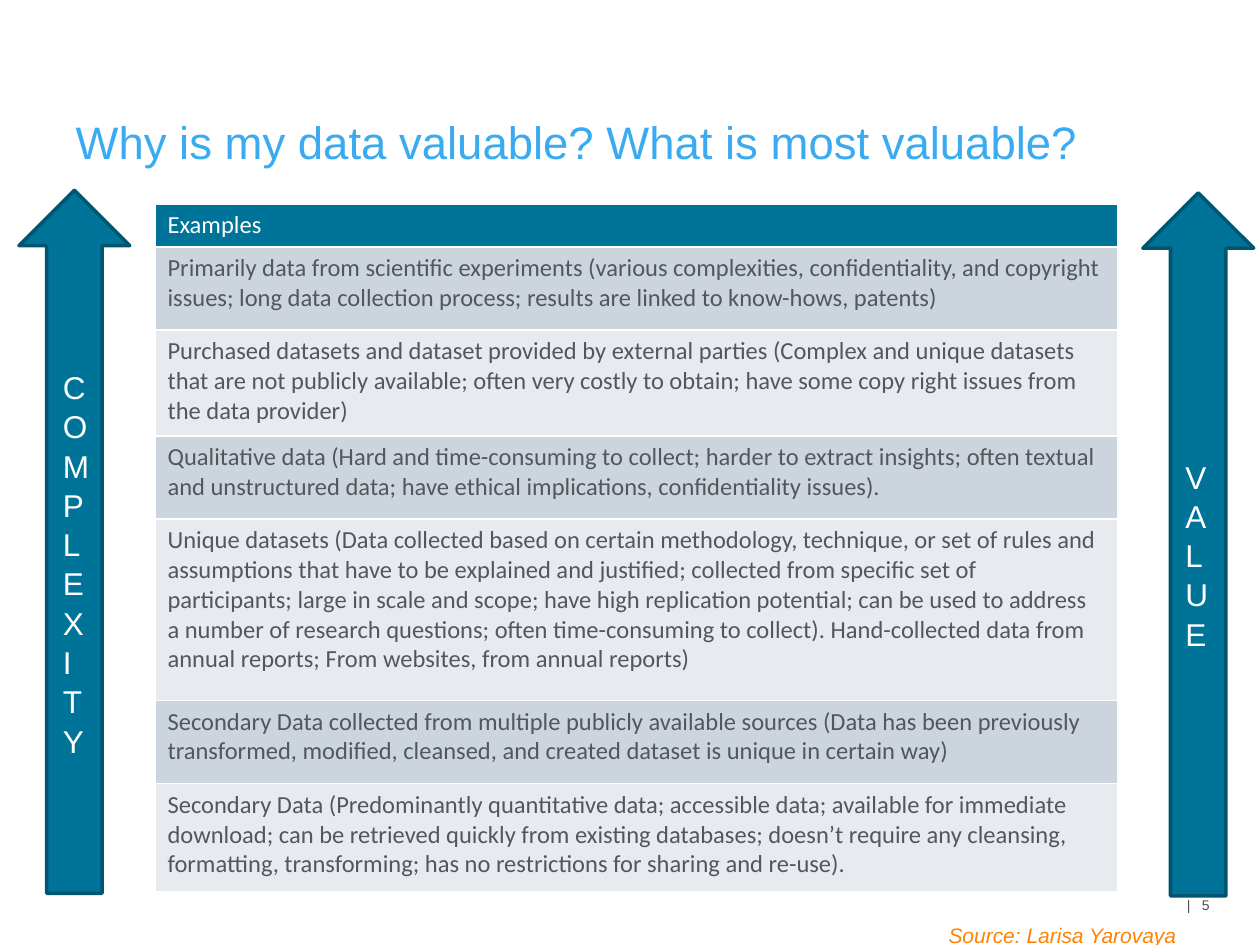
from dataclasses import dataclass

from lxml import etree
from pptx import Presentation
from pptx import util as u
from pptx.dml.color import RGBColor
from pptx.enum import shapes, text
from pptx.oxml.ns import qn


@dataclass(frozen=True)
class Theme:
    heading_font: str = "Arial"
    table_font: str = "Calibri"
    title: str = "3AABF0"
    teal: str = "007398"
    teal_dark: str = "005570"
    white: str = "FFFFFF"
    body: str = "53565A"
    footer: str = "505050"
    credit: str = "FF8200"
    bands: tuple = ("CCD5DD", "E7EBEF")
    title_size: float = 26
    label_size: float = 18
    table_size: float = 14
    credit_size: float = 12
    footer_size: float = 8


THEME = Theme()

ROWS = [
    ("Examples", 0.34),
    ("Primarily data from scientific experiments (various complexities, "
     "confidentiality, and copyright issues; long data collection process; "
     "results are linked to know-hows, patents)", 0.66),
    ("Purchased datasets and dataset provided by external parties (Complex and "
     "unique datasets that are not publicly available; often very costly to "
     "obtain; have some copy right issues from the data provider)", 0.84),
    ("Qualitative data (Hard and time-consuming to collect; harder to extract "
     "insights; often textual and unstructured data; have ethical implications, "
     "confidentiality issues).", 0.66),
    ("Unique datasets (Data collected based on certain methodology, technique, "
     "or set of rules and assumptions that have to be explained and justified; "
     "collected from specific set of participants; large in scale and scope; "
     "have high replication potential; can be used to address a number of "
     "research questions; often time-consuming to collect). Hand-collected data "
     "from annual reports; From websites, from annual reports)", 1.44),
    ("Secondary Data collected from multiple publicly available sources (Data "
     "has been previously transformed, modified, cleansed, and created dataset "
     "is unique in certain way)", 0.66),
    ("Secondary Data (Predominantly quantitative data; accessible data; "
     "available for immediate download; can be retrieved quickly from existing "
     "databases; doesn’t require any cleansing, formatting, transforming; has "
     "no restrictions for sharing and re-use).", 0.86),
]


def inches(box):
    return [u.Inches(length) for length in box]


def set_format(target, values):
    for name, value in values.items():
        setattr(target, name, value)


def style_font(paragraph, face, size, color, **extra):
    set_format(paragraph.font, {"name": face, "size": u.Pt(size), **extra})
    paragraph.font.color.rgb = RGBColor.from_string(color)


def paint(fill, color):
    fill.solid()
    fill.fore_color.rgb = RGBColor.from_string(color)


def add_title(slide, box, wording):
    title = slide.shapes.title
    set_format(title, dict(zip(("left", "top", "width", "height"), inches(box))))
    frame = title.text_frame
    frame.text = wording
    set_format(frame, {"word_wrap": True, "auto_size": text.MSO_AUTO_SIZE.NONE,
                       "vertical_anchor": text.MSO_ANCHOR.MIDDLE})
    frame.paragraphs[0].alignment = text.PP_ALIGN.LEFT
    style_font(frame.paragraphs[0], THEME.heading_font, THEME.title_size, THEME.title)


def add_examples_table(slide, box):
    table = slide.shapes.add_table(len(ROWS), 1, *inches(box)).table
    for index, (wording, height) in enumerate(ROWS):
        table.rows[index].height = u.Inches(height)
        cell = table.cell(index, 0)
        cell.text = wording
        header = index == 0
        paint(cell.fill, THEME.teal if header else THEME.bands[(index - 1) % 2])
        style_font(cell.text_frame.paragraphs[0], THEME.table_font, THEME.table_size,
                   THEME.white if header else THEME.body, bold=False)


def add_arrow(slide, box):
    arrow = slide.shapes.add_shape(shapes.MSO_SHAPE.UP_ARROW, *inches(box))
    arrow.shadow.inherit = False
    paint(arrow.fill, THEME.teal)
    paint(arrow.line.fill, THEME.teal_dark)
    arrow.line.width = u.Pt(2)


def add_stacked_label(slide, box, word):
    frame = slide.shapes.add_textbox(*inches(box)).text_frame
    frame.word_wrap = True
    frame.text = "\n".join(word)
    for letter in frame.paragraphs:
        letter.line_spacing = 1.04
        style_font(letter, THEME.heading_font, THEME.label_size, THEME.white)


def add_credit(slide, box, wording):
    frame = slide.shapes.add_textbox(*inches(box)).text_frame
    frame.word_wrap = True
    frame.text = wording
    style_font(frame.paragraphs[0], THEME.heading_font, THEME.credit_size,
               THEME.credit, italic=True)


def add_page_number(slide, box, number):
    frame = slide.shapes.add_textbox(*inches(box)).text_frame
    set_format(frame, {"word_wrap": True, "vertical_anchor": text.MSO_ANCHOR.MIDDLE,
                       "margin_left": u.Inches(0.36), "margin_right": u.Inches(0.02)})
    frame.text = f"|\t{number}"
    # A tab stop sets the gap between the bar and the number
    paragraph = frame.paragraphs[0]
    stops = etree.SubElement(paragraph._p.get_or_add_pPr(), qn("a:tabLst"))
    etree.SubElement(stops, qn("a:tab"), pos=str(u.Inches(0.12)), algn="l")
    style_font(paragraph, THEME.heading_font, THEME.footer_size, THEME.footer)


def main():
    deck = Presentation()
    set_format(deck, {"slide_width": u.Inches(10), "slide_height": u.Inches(7.5)})
    slide = deck.slides.add_slide(deck.slide_layouts.get_by_name("Title Only"))

    # Heading and table
    add_page_number(slide, (9.06, 7, 0.64, 0.37), 5)
    add_title(slide, (0.5, 0.91, 9.01, 0.42),
              "Why is my data valuable? What is most valuable?")
    add_examples_table(slide, (1.23, 1.62, 7.64, 5.46))

    # Arrows on either side, with their labels
    for arrow_box, label_box, word in (
        ((0.15, 1.51, 0.88, 5.58), (0.4, 2.86, 0.38, 3.13), "COMPLEXITY"),
        ((9.07, 1.53, 0.88, 5.58), (9.31, 3.57, 0.4, 1.62), "VALUE"),
    ):
        add_arrow(slide, arrow_box)
        add_stacked_label(slide, label_box, word)

    # Credit line
    add_credit(slide, (7.43, 7.27, 2.5, 0.3), "Source: Larisa Yarovaya")
    deck.save("out.pptx")


if __name__ == "__main__":
    main()
